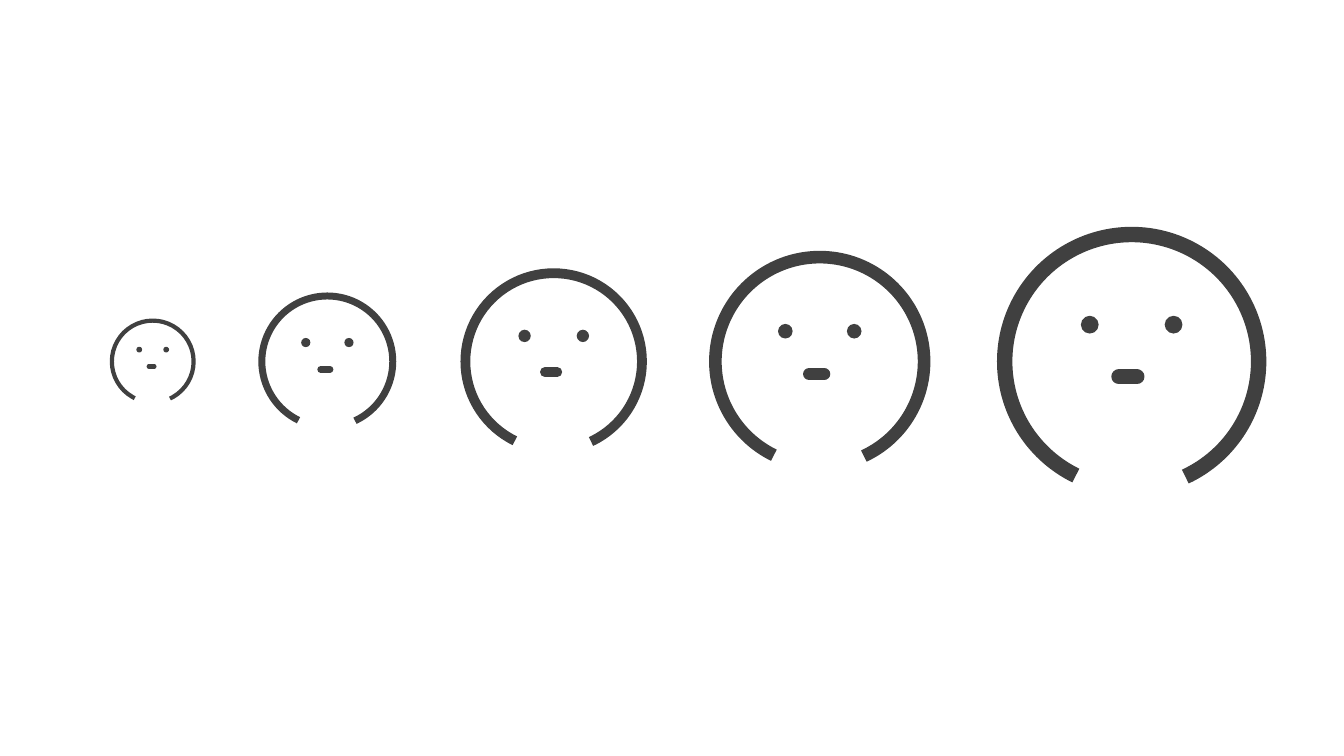
"""Build a slide with a row of five simple round faces growing in size."""
from dataclasses import dataclass

from lxml.etree import SubElement
from pptx import Presentation
from pptx.dml.color import RGBColor
from pptx.enum.shapes import MSO_CONNECTOR as Connector, MSO_SHAPE as Shape
from pptx.oxml.ns import qn
from pptx.shapes.shapetree import GroupShapes
from pptx.slide import Slide
from pptx.util import Cm, Pt

CHARCOAL = RGBColor(0x40, 0x40, 0x40)
CENTRE_Y = 9.11
ARC_START, ARC_END = 69.65, 39.0
EYE_LEFTS = (0.30, 0.63)
EYE_TOP, EYE_SIZE = 0.32, 0.07
MOUTH_LEFT, MOUTH_RIGHT, MOUTH_Y = 0.45, 0.52, 0.56


@dataclass(frozen=True)
class Face:
    left: float
    diameter: float
    stroke: int

    def x(self, share: float) -> Cm:
        return Cm(self.left + share * self.diameter)

    def y(self, share: float) -> Cm:
        return Cm(CENTRE_Y + (share - 0.5) * self.diameter)


FACES = (
    Face(2.82, 2.06, 3),
    Face(6.6, 3.3, 5),
    Face(11.73, 4.45, 7),
    Face(18.03, 5.26, 9),
    Face(25.32, 6.4, 11),
)


def draw_head(shapes: GroupShapes, face: Face) -> None:
    size = Cm(face.diameter)
    head = shapes.add_shape(Shape.ARC, face.x(0), face.y(0), size, size)
    head.adjustments[0] = ARC_START
    head.adjustments[1] = ARC_END
    head.shadow.inherit = False
    head.fill.background()
    head.line.color.rgb = CHARCOAL
    head.line.width = Pt(face.stroke)


def draw_eye(shapes: GroupShapes, face: Face, left: float) -> None:
    size = Cm(EYE_SIZE * face.diameter)
    eye = shapes.add_shape(Shape.OVAL, face.x(left), face.y(EYE_TOP), size, size)
    eye.shadow.inherit = False
    eye.fill.solid()
    eye.fill.fore_color.rgb = CHARCOAL
    eye.line.fill.background()


def draw_mouth(shapes: GroupShapes, face: Face) -> None:
    height = face.y(MOUTH_Y)
    mouth = shapes.add_connector(
        Connector.STRAIGHT, face.x(MOUTH_LEFT), height, face.x(MOUTH_RIGHT), height
    )
    mouth.line.color.rgb = CHARCOAL
    mouth.line.width = Pt(face.stroke)
    properties = mouth._element.spPr
    properties.find(qn("a:ln")).set("cap", "rnd")
    SubElement(properties, qn("a:effectLst"))


def draw_face(slide: Slide, face: Face) -> None:
    shapes = slide.shapes.add_group_shape().shapes
    draw_head(shapes, face)
    for left in EYE_LEFTS:
        draw_eye(shapes, face, left)
    draw_mouth(shapes, face)


def main() -> None:
    presentation = Presentation()
    presentation.slide_width = Cm(33.87)
    presentation.slide_height = Cm(19.05)
    slide = presentation.slides.add_slide(presentation.slide_layouts[6])
    for face in FACES:
        draw_face(slide, face)
    presentation.save("out.pptx")


if __name__ == "__main__":
    main()
